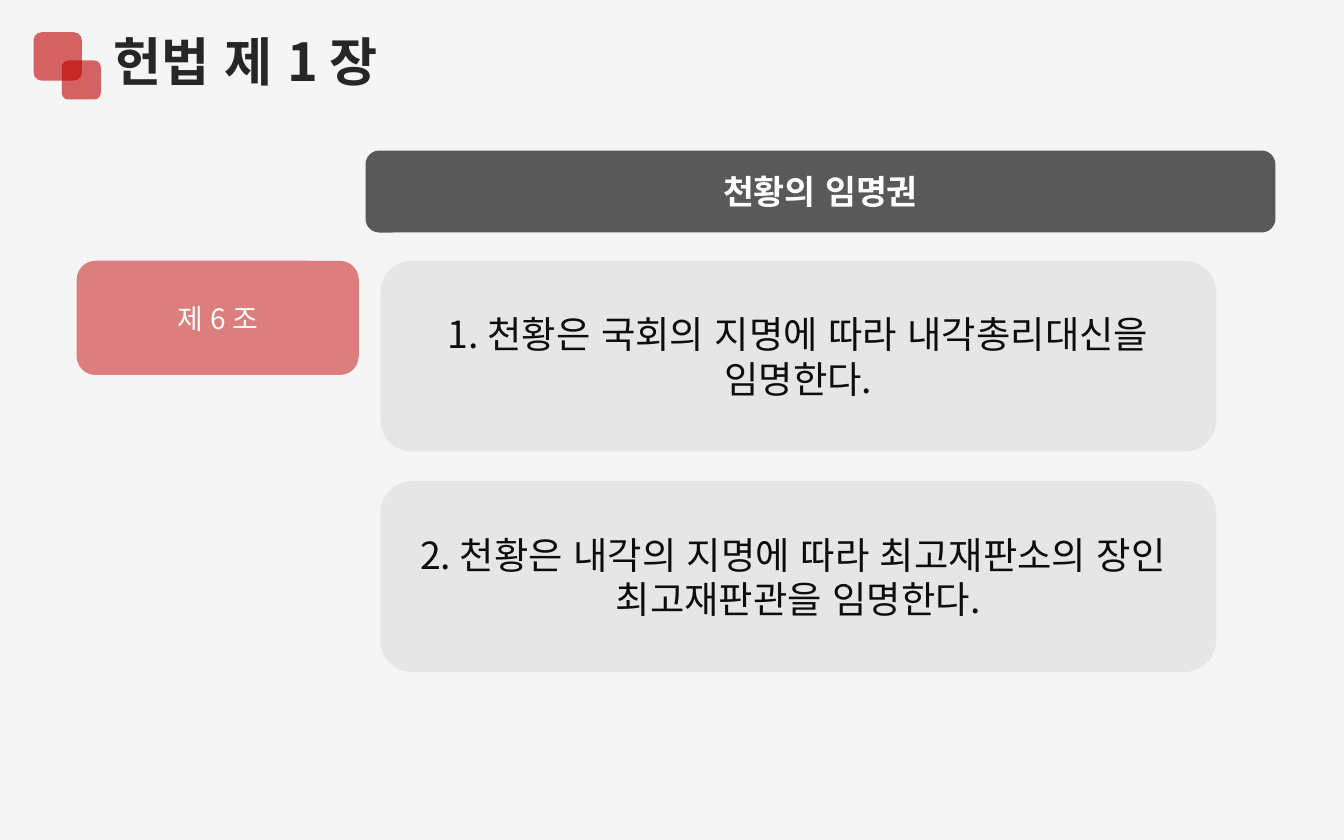
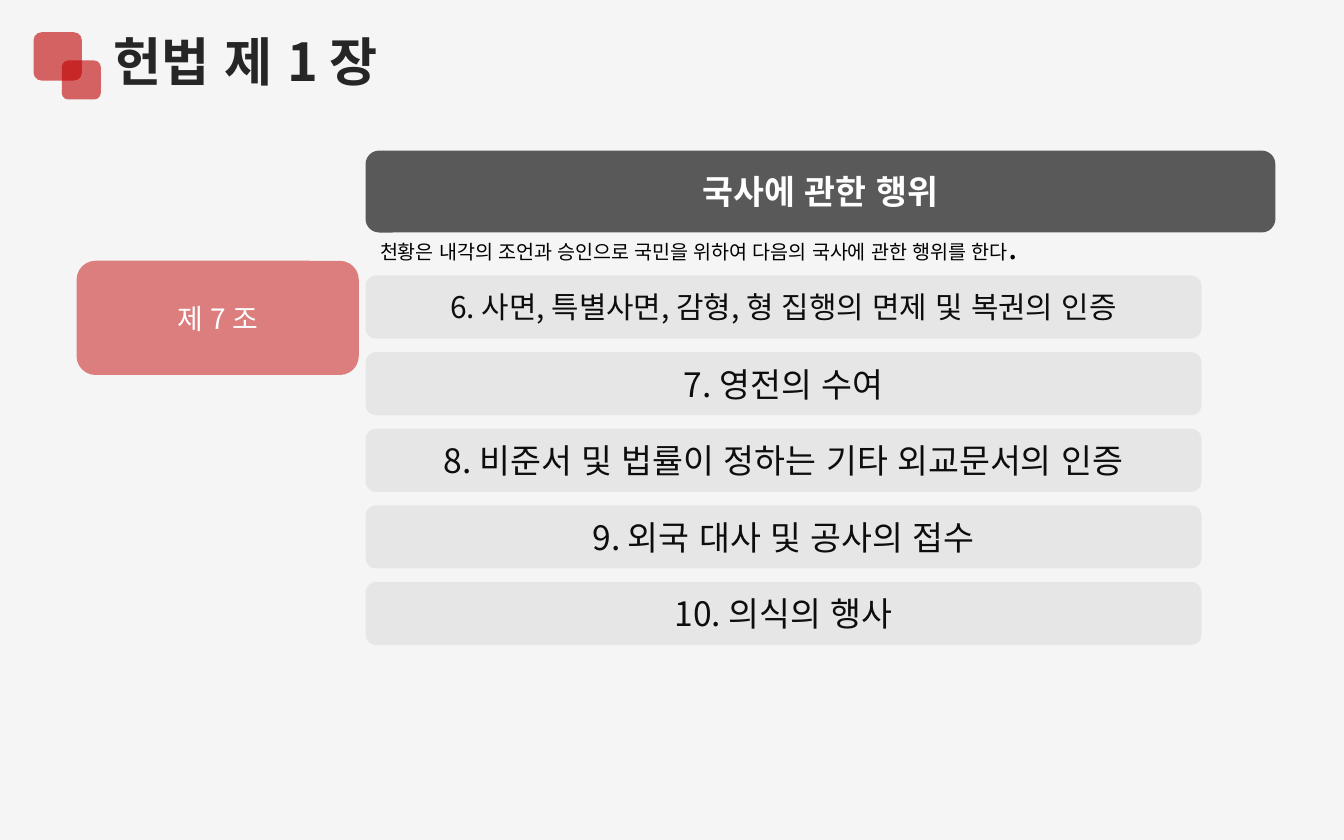
from dataclasses import dataclass

from lxml import etree
from pptx import Presentation
from pptx.dml.color import RGBColor
from pptx.enum import lang, shapes, text
from pptx.oxml import ns
from pptx.util import Inches, Pt


@dataclass(frozen=True)
class Theme:
    font: str = "Noto Sans CJK KR"
    back: str = "F5F5F5"
    mark: str = "C00000"
    dark: str = "595959"
    rose: str = "DC7E7E"
    pale: str = "E6E6E6"
    ink: str = "0D0D0D"
    head: str = "262626"
    black: str = "000000"
    white: str = "FFFFFF"
    title: float = 28
    large: float = 20
    body: float = 18
    small: float = 16
    tag: float = 15
    note: float = 10.5


T = Theme()
LEFT = 2.72
WIDE = 6.22


def write(frame, *lines, size=T.body, color=T.ink, bold=False, align=None):
    """Fill a frame; a line is a string or a list of (string, size) runs."""
    frame.word_wrap = True
    for i, line in enumerate(lines):
        para = frame.paragraphs[0] if i == 0 else frame.add_paragraph()
        para.alignment = align
        for words, points in [(line, size)] if isinstance(line, str) else line:
            run = para.add_run()
            run.text = words
            font = run.font
            font.name, font.size, font.bold = T.font, Pt(points), bold
            font.color.rgb = RGBColor.from_string(color)
            font.language_id = lang.MSO_LANGUAGE_ID.KOREAN
            east = etree.SubElement(run._r.get_or_add_rPr(), ns.qn("a:ea"))
            east.set("typeface", T.font)


def label(slide, box, *lines, **style):
    area = slide.shapes.add_textbox(*map(Inches, box))
    write(area.text_frame, *lines, **style)
    area.text_frame.auto_size = text.MSO_AUTO_SIZE.SHAPE_TO_FIT_TEXT


def panel(slide, box, fill, *lines, alpha=None, **style):
    """Add a rounded box; alpha is its opacity in percent."""
    shape = slide.shapes.add_shape(
        shapes.MSO_SHAPE.ROUNDED_RECTANGLE, *map(Inches, box))
    shape.shadow.inherit = False
    shape.line.fill.background()
    shape.fill.solid()
    shape.fill.fore_color.rgb = RGBColor.from_string(fill)
    if alpha is not None:
        tint = shape._element.spPr.find(".//" + ns.qn("a:srgbClr"))
        etree.SubElement(tint, ns.qn("a:alpha")).set("val", str(alpha * 1000))
    if lines:
        shape.text_frame.vertical_anchor = text.MSO_ANCHOR.MIDDLE
        write(shape.text_frame, *lines, align=text.PP_ALIGN.CENTER, **style)


def page(deck, topic, article):
    """Add a slide with the chapter title, topic bar and article tag."""
    slide = deck.slides.add_slide(deck.slide_layouts[6])
    slide.background.fill.solid()
    slide.background.fill.fore_color.rgb = RGBColor.from_string(T.back)
    label(slide, (0.75, 0.17, 5.2, 0.57), "헌법 제 1 장",
          size=T.title, color=T.head, bold=True)
    for x, y, side in ((0.25, 0.24, 0.36), (0.46, 0.45, 0.29)):
        panel(slide, (x, y, side, side), T.mark, alpha=60)
    panel(slide, (LEFT, 1.12, 6.77, 0.61), T.dark, topic,
          color=T.white, bold=True)
    panel(slide, (0.57, 1.94, 2.1, 0.85), T.rose, article,
          size=T.tag, color=T.white)
    return slide


def stack(slide, x, top, high, step, items):
    """Place (lines, size) items in equal boxes down the slide."""
    for i, (lines, size) in enumerate(items):
        panel(slide, (x, top + i * step, WIDE, high), T.pale, *lines, size=size)


def main():
    deck = Presentation()
    deck.slide_width, deck.slide_height = Inches(10), Inches(6.25)

    power = page(deck, "천황의 임명권", "제 6 조")
    stack(power, 2.83, 1.94, 1.42, 1.64, [
        (["1. 천황은 국회의 지명에 따라 내각총리대신을 임명한다."], T.large),
        (["2. 천황은 내각의 지명에 따라 최고재판소의 장인 ",
          "최고재판관을 임명한다."], T.large),
    ])

    acts = page(deck, "국사에 관한 행위", "제 7 조")
    label(acts, (2.66, 1.63, 5.67, 0.4), [
        (" ", T.body),
        ("천황은 내각의 조언과 승인으로 국민을 위하여 다음의 국사에 관한 행위를 한다",
         T.note),
        (".", T.body),
    ], color=T.black)
    stack(acts, LEFT, 2.05, 0.47, 0.57, [
        (["6. 사면, 특별사면, 감형, 형 집행의 면제 및 복권의 인증"], T.small),
        (["7. 영전의 수여"], T.body),
        (["8. 비준서 및 법률이 정하는 기타 외교문서의 인증"], T.body),
        (["9. 외국 대사 및 공사의 접수"], T.body),
        (["10. 의식의 행사"], T.body),
    ])

    deck.save("out.pptx")


if __name__ == "__main__":
    main()
